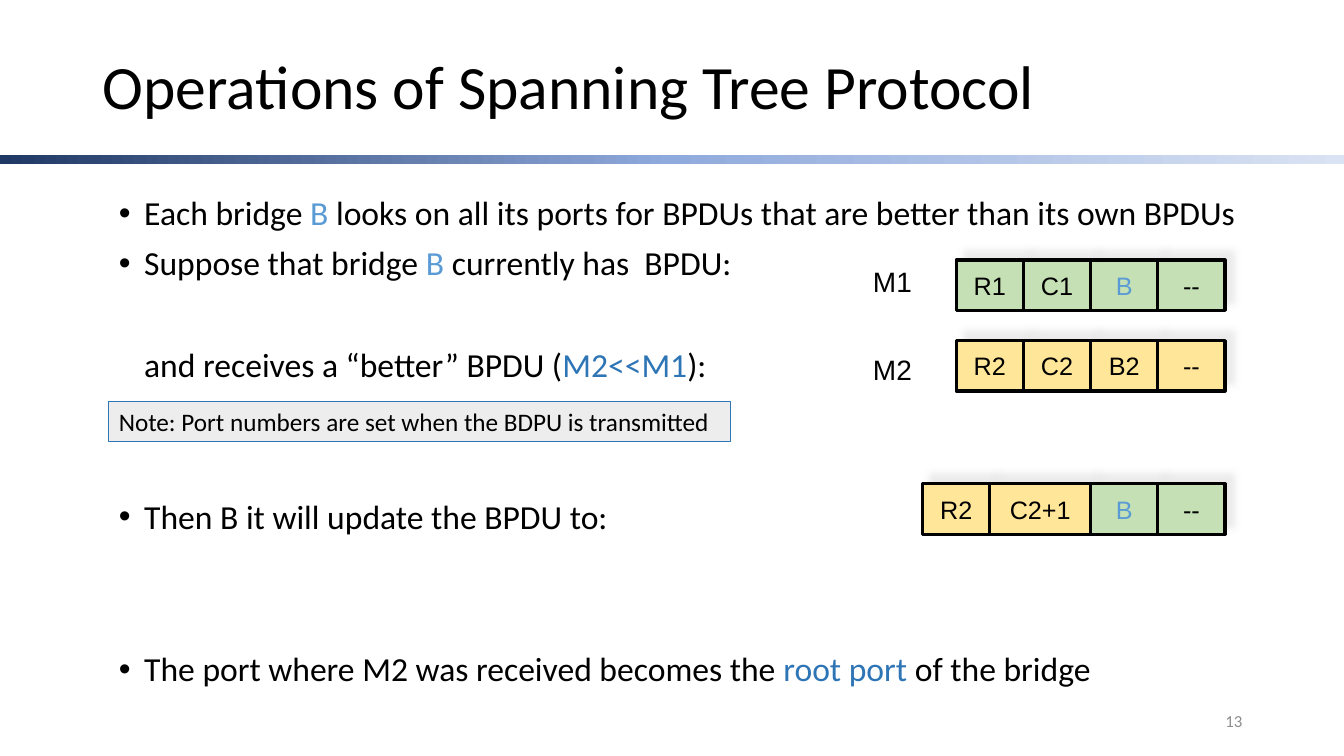
from copy import deepcopy

from lxml import etree
from pptx import Presentation
from pptx import util as u
from pptx.dml.color import RGBColor
from pptx.enum import shapes, text
from pptx.oxml import parse_xml
from pptx.oxml.ns import nsdecls, qn

W, H = 13.33, 7.5
CELL_W, CELL_H = W / 20, H / 15
ROW_RIGHT = 12.15
LINE_PITCH = 36.4  # one 24 pt body line with its spacing, in points
PARA_GAP = 10

COLORS = {
    "black": "000000", "blue": "5B9BD5", "deep": "2E75B6", "gray": "8C8C8C",
    "green": "C5E0B4", "yellow": "FFE699", "note": "EDEDED", "shadow": "E7E6E6",
    "bar_start": "203864", "bar_mid": "8FAADC", "bar_end": "DAE3F3",
}

# Body lines: blank rows above, bulleted, (text, color) runs
BODY = [
    (0, True, [("Each bridge ", "black"), ("B", "blue"),
               (" looks on all its ports for BPDUs that are better than its own BPDUs", "black")]),
    (0, True, [("Suppose that bridge ", "black"), ("B", "blue"),
               (" currently has  BPDU:", "black")]),
    (1, False, [("and receives a “better” BPDU (", "black"), ("M2<<M1", "deep"),
                ("):", "black")]),
    (2, True, [("Then B it will update the BPDU to:", "black")]),
    (2, True, [("The port where M2 was received becomes the ", "black"),
               ("root port ", "deep"), ("of the bridge", "black")]),
]

# BPDU rows: top, label, label top, (text, fill, text color, width in cells)
BPDUS = [
    (2.58, "M1", 2.58, [("R1", "green", "black", 1), ("C1", "green", "black", 1),
                        ("B", "green", "blue", 1), ("--", "green", "black", 1)]),
    (3.38, "M2", 3.45, [("R2", "yellow", "black", 1), ("C2", "yellow", "black", 1),
                        ("B2", "yellow", "black", 1), ("--", "yellow", "black", 1)]),
    (4.8, None, None, [("R2", "yellow", "black", 1), ("C2+1", "yellow", "black", 1.5),
                       ("B", "green", "blue", 1), ("--", "green", "black", 1)]),
]


def rgb(name):
    return RGBColor.from_string(COLORS[name])


def place(sp, x, y, w, h):
    sp.left, sp.top, sp.width, sp.height = (u.Inches(v) for v in (x, y, w, h))


def add_run(p, words, size=18, font="Calibri", color="black"):
    r = p.add_run()
    r.text = words
    r.font.size, r.font.name = u.Pt(size), font
    r.font.color.rgb = rgb(color)


def write(sp, words, align="LEFT", anchor="TOP", wrap=True, **fmt):
    tf = sp.text_frame
    tf.word_wrap = wrap
    tf.auto_size = text.MSO_AUTO_SIZE.NONE
    tf.vertical_anchor = getattr(text.MSO_ANCHOR, anchor)
    p = tf.paragraphs[0]
    p.alignment = getattr(text.PP_ALIGN, align)
    add_run(p, words, **fmt)
    return p


def add_box(parent, x, y, w, h, fill=None, line=None, weight=0.75):
    sp = parent.add_shape(shapes.MSO_SHAPE.RECTANGLE, *(u.Inches(v) for v in (x, y, w, h)))
    sp.shadow.inherit = False
    if fill:
        sp.fill.solid()
        sp.fill.fore_color.rgb = rgb(fill)
    if line:
        sp.line.color.rgb = rgb(line)
        sp.line.width = u.Pt(weight)
    else:
        sp.line.fill.background()
    return sp


def add_label(parent, x, y, w, h, words, **fmt):
    sp = parent.add_textbox(*(u.Inches(v) for v in (x, y, w, h)))
    write(sp, words, **fmt)


def add_shadow(sp):
    effects = sp._element.spPr.find(qn("a:effectLst"))
    effects.append(parse_xml(
        f'<a:outerShdw {nsdecls("a")} blurRad="{u.Pt(5)}" dist="{u.Pt(8.5)}" '
        f'dir="18900000" algn="ctr" rotWithShape="0"><a:srgbClr val="{COLORS["shadow"]}">'
        '<a:alpha val="75000"/></a:srgbClr></a:outerShdw>'))


def add_bar(s):
    sp = add_box(s.shapes, 0, 1.54, W, 0.09)
    sp.fill.gradient()
    sp.fill.gradient_angle = 0
    stops = sp._element.spPr.find(".//" + qn("a:gsLst"))
    stops.append(deepcopy(stops[0]))
    for stop, at, name in zip(sp.fill.gradient_stops, (0, 0.5, 1),
                              ("bar_start", "bar_mid", "bar_end")):
        stop.position = at
        stop.color.rgb = rgb(name)


def add_body(body):
    place(body, 1.08, 1.9, 11.55, 5.02)
    tf = body.text_frame
    tf.word_wrap = True
    tf.auto_size = text.MSO_AUTO_SIZE.NONE
    for i, (blank_rows, bulleted, runs) in enumerate(BODY):
        p = tf.add_paragraph() if i else tf.paragraphs[0]
        p.line_spacing = 0.9
        p.space_before = u.Pt(PARA_GAP + blank_rows * LINE_PITCH)
        pPr = p._p.get_or_add_pPr()
        pPr.set("marL", str(u.Inches(0.25)))
        pPr.set("indent", str(u.Inches(-0.25) if bulleted else 0))
        if bulleted:
            etree.SubElement(pPr, qn("a:buFont")).set("typeface", "Arial")
            etree.SubElement(pPr, qn("a:buChar")).set("char", "•")
        else:
            etree.SubElement(pPr, qn("a:buNone"))
        for words, color in runs:
            add_run(p, words, size=24, color=color)


def add_bpdu(s, top, label, label_top, cells):
    group = s.shapes.add_group_shape().shapes
    x = ROW_RIGHT - CELL_W * sum(span for *_, span in cells)
    for words, fill, color, span in cells:
        sp = add_box(group, x, top, span * CELL_W, CELL_H, fill, "black", 2.25)
        add_shadow(sp)
        write(sp, words, align="CENTER", anchor="MIDDLE", wrap=False,
              font="Arial", color=color)
        x += span * CELL_W
    if label:
        add_label(group, 8.56, label_top, 0.83, 0.43, label, size=20, font="Arial")


def main():
    prs = Presentation()
    prs.slide_width, prs.slide_height = u.Inches(W), u.Inches(H)
    s = prs.slides.add_slide(prs.slide_layouts[1])

    # Heading and divider
    add_bar(s)
    title = s.shapes.title
    place(title, 0.92, 0.4, 11.5, 0.97)
    write(title, "Operations of Spanning Tree Protocol", anchor="MIDDLE",
          size=44).line_spacing = 0.9

    # Steps and BPDU fields
    add_body(s.placeholders[1])
    for bpdu in BPDUS:
        add_bpdu(s, *bpdu)

    # Note and page number
    note = add_box(s.shapes, 1.08, 3.98, 6.17, 0.4, "note", "deep")
    write(note, "Note: Port numbers are set when the BDPU is transmitted")
    add_label(s.shapes, 9.42, 6.95, 3, 0.4, "13", align="RIGHT", anchor="MIDDLE",
              size=12, color="gray")

    prs.save("out.pptx")


if __name__ == "__main__":
    main()
